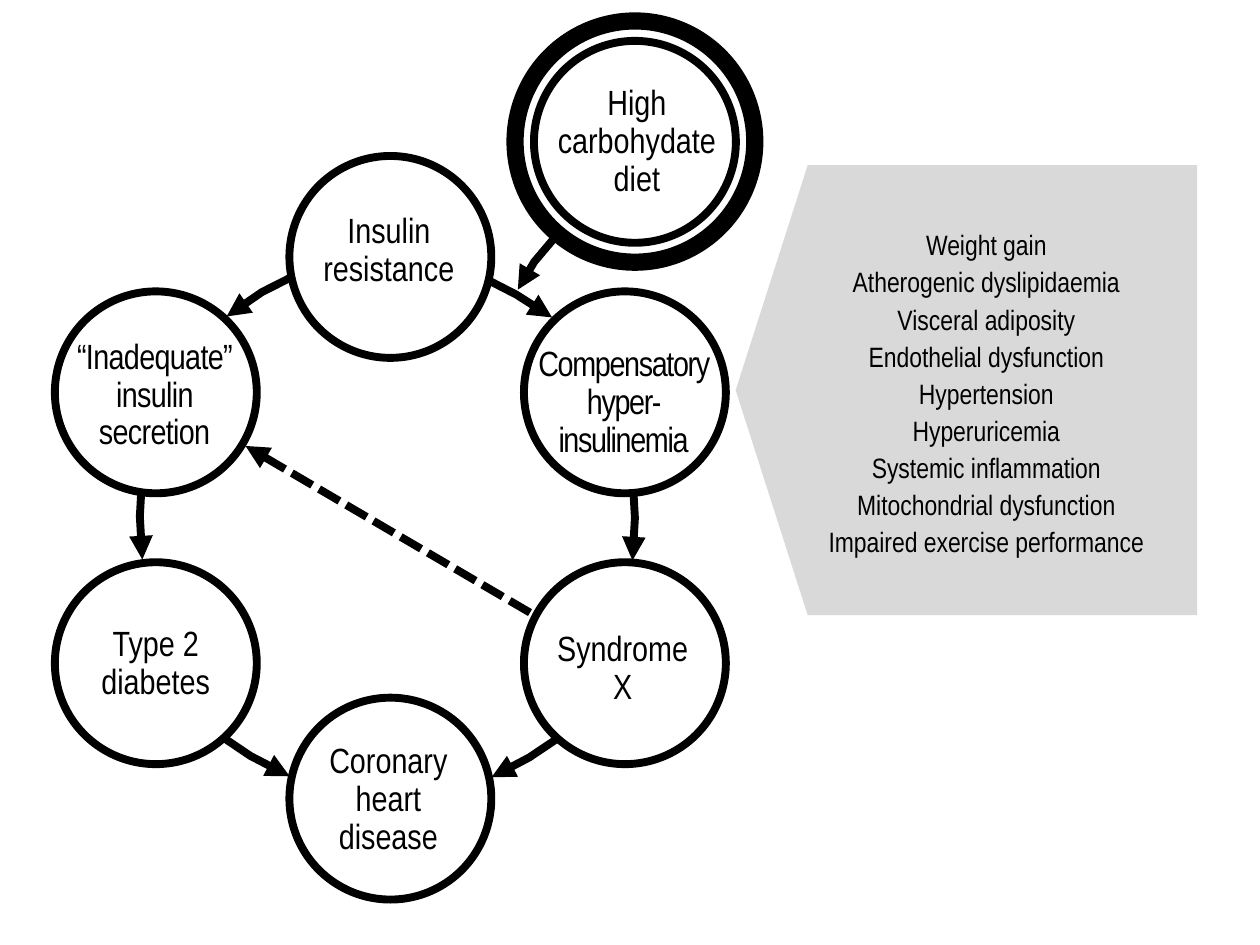
"""Build a slide showing how a high carbohydrate diet drives a cycle of metabolic disease."""
from math import cos, radians, sin

from lxml.etree import SubElement
from pptx import Presentation
from pptx.dml.color import RGBColor
from pptx.enum.dml import MSO_LINE
from pptx.enum.shapes import MSO_CONNECTOR, MSO_SHAPE
from pptx.enum.text import MSO_AUTO_SIZE, PP_ALIGN
from pptx.oxml.ns import qn
from pptx.util import Cm, Pt


def style_line(shape, arrowhead=None):
    shape.line.color.rgb = RGBColor.from_string("000000")
    shape.line.width = Pt(4.5)
    if arrowhead:
        SubElement(shape.line._get_or_add_ln(), qn(f"a:{arrowhead}"), type="triangle")


def add_text(box, paragraphs, size, line_spacing=None, space_after=None, tracking=0):
    text_frame = slide.shapes.add_textbox(*[Cm(length) for length in box]).text_frame
    text_frame.word_wrap = True
    text_frame.auto_size = MSO_AUTO_SIZE.SHAPE_TO_FIT_TEXT
    text_frame.text = "\n".join(paragraphs)
    for paragraph in text_frame.paragraphs:
        paragraph.alignment = PP_ALIGN.CENTER
        paragraph.line_spacing = line_spacing
        paragraph.space_after = space_after
        paragraph.font.name = "Arial Narrow"
        paragraph.font.size = Pt(size)
        paragraph.font.color.rgb = RGBColor.from_string("000000")
        if tracking:
            for run in paragraph.runs:
                run._r.get_or_add_rPr().set("spc", str(tracking))


presentation = Presentation()
presentation.slide_width = Cm(25.4)
presentation.slide_height = Cm(19.05)
slide = presentation.slides.add_slide(presentation.slide_layouts[6])

arrows = [
    [(4.34, 14.76), (5.05, 15.24), (5.84, 15.65)],
    [(11.4, 14.78), (10.67, 15.27), (9.91, 15.67)],
    [(12.75, 9.55), (12.8, 10.44), (12.75, 11.3)],
    [(2.87, 9.53), (2.82, 10.41), (2.87, 11.28)],
    [(6.07, 5.49), (5.28, 5.89), (4.57, 6.38)],
    [(9.63, 5.54), (10.41, 5.94), (11.13, 6.4)],
    [(11.15, 4.83), (10.77, 5.28), (10.44, 5.84)],
]
for arrow in arrows:
    start, *rest = [(Cm(x), Cm(y)) for x, y in arrow]
    builder = slide.shapes.build_freeform(*start)
    builder.add_line_segments(rest, close=False)
    shape = builder.convert_to_shape()
    shape.shadow.inherit = False
    shape.fill.background()
    style_line(shape, "tailEnd")

ring_x, ring_y, ring_radius, diameter = 7.87, 10.64, 5.46, 4.07
centers = [(12.8, 2.86)]
for angle in range(0, 360, 60):
    centers.append((ring_x + ring_radius * sin(radians(angle)),
                    ring_y - ring_radius * cos(radians(angle))))
for x, y in centers:
    circle = slide.shapes.add_shape(MSO_SHAPE.OVAL, Cm(x - diameter / 2), Cm(y - diameter / 2),
                                    Cm(diameter), Cm(diameter))
    circle.shadow.inherit = False
    circle.fill.solid()
    circle.fill.fore_color.rgb = RGBColor.from_string("FFFFFF")
    style_line(circle)

labels = [
    ("High carbohydate diet", (10.72, 1.6, 4.24, 2.57), 0),
    ("Insulin resistance", (5.72, 4.17, 4.24, 1.8), 0),
    ("Compensatory hyper-insulinemia", (10.46, 6.86, 4.22, 2.57), -80),
    ("Syndrome X", (10.74, 12.6, 3.63, 1.8), 0),
    ("Coronary heart disease", (5.94, 14.86, 3.78, 2.57), 0),
    ("Type 2 diabetes", (1.07, 12.5, 4.14, 1.8), 0),
    ("“Inadequate” insulin secretion", (1.07, 6.71, 4.09, 2.57), -40),
]
for label, box, tracking in labels:
    add_text(box, [label], 20, line_spacing=0.9, tracking=tracking)

feedback = slide.shapes.add_connector(MSO_CONNECTOR.STRAIGHT, Cm(4.95), Cm(8.99),
                                      Cm(10.77), Cm(12.4))
feedback.line.dash_style = MSO_LINE.SQUARE_DOT
style_line(feedback, "headEnd")
SubElement(feedback._element.spPr, qn("a:effectLst"))

solid_shapes = [
    (MSO_SHAPE.PENTAGON, (14.83, 3.33, 9.3, 9.07), 0.16, 180, "D9D9D9"),
    (MSO_SHAPE.DONUT, (10.21, 0.25, 5.18, 5.21), 0.067, 0, "000000"),
]
for kind, box, adjustment, rotation, color in solid_shapes:
    shape = slide.shapes.add_shape(kind, *[Cm(length) for length in box])
    shape.adjustments[0] = adjustment
    shape.rotation = rotation
    shape.shadow.inherit = False
    shape.fill.solid()
    shape.fill.fore_color.rgb = RGBColor.from_string(color)
    shape.line.fill.background()

consequences = [
    "Weight gain",
    "Atherogenic dyslipidaemia",
    "Visceral adiposity",
    "Endothelial dysfunction",
    "Hypertension",
    "Hyperuricemia",
    "Systemic inflammation",
    "Mitochondrial dysfunction",
    "Impaired exercise performance",
]
add_text((15.11, 4.47, 9.55, 6.99), consequences, 16, space_after=Pt(2))

presentation.save("out.pptx")
